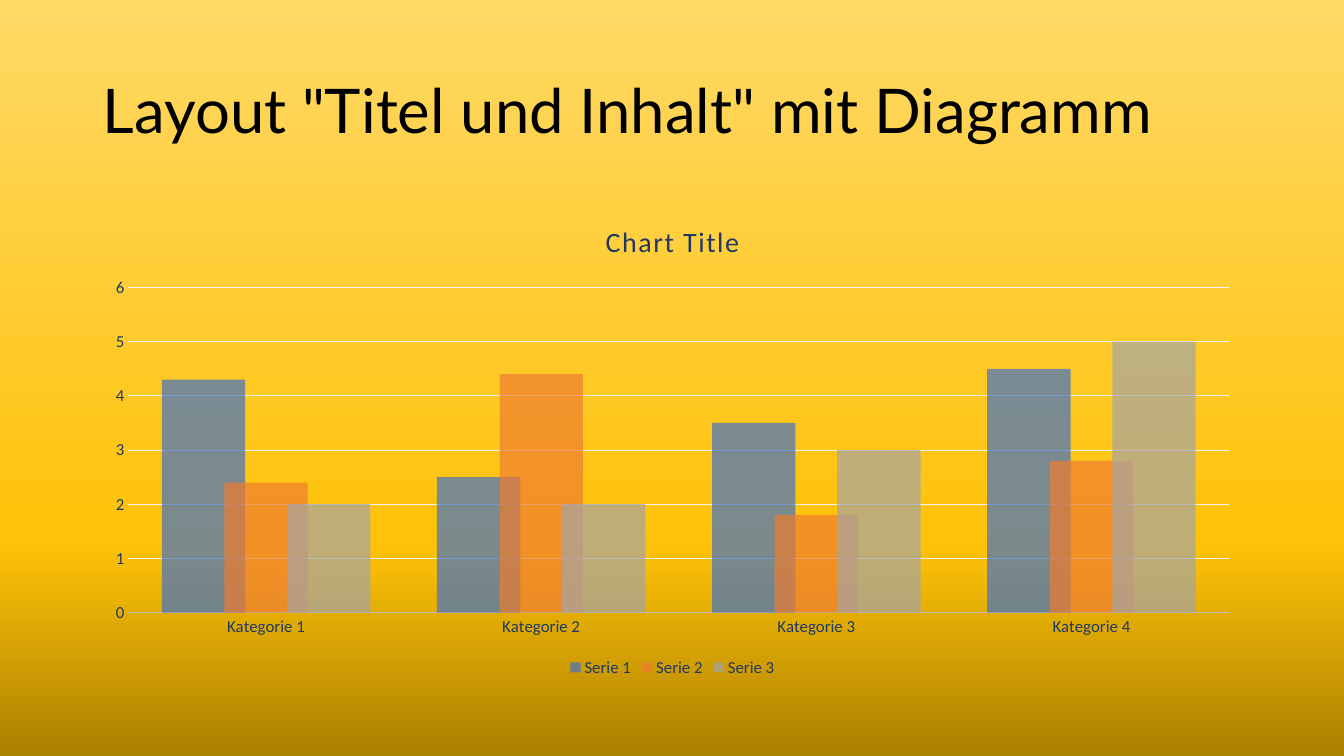
from copy import deepcopy

from lxml.etree import SubElement as Sub
from pptx import Presentation
from pptx.chart.data import CategoryChartData as Data
from pptx.dml.color import RGBColor as Rgb
from pptx.enum.chart import XL_CHART_TYPE as Kind
from pptx.enum.chart import XL_LEGEND_POSITION as Spot
from pptx.enum.chart import XL_TICK_MARK as Tick
from pptx.enum.text import MSO_ANCHOR as Anchor
from pptx.oxml.ns import qn
from pptx.util import Inches, Pt


class Deck:
    hues = {
        "dark": "AB8100", "gold": "FFC208", "pale": "FFD966",
        "black": "000000", "navy": "203864", "axis": "BFBFBF", "grid": "F2F2F2",
        "blue": "4472C4", "orange": "ED7D31", "gray": "A5A5A5",
    }
    head = "Lato"
    body = "Calibri"

    def __init__(self):
        self.prs = Presentation()
        self.prs.slide_width = Inches(13.33)
        self.prs.slide_height = Inches(7.5)
        self.slide = self.prs.slides.add_slide(self.prs.slide_layouts[6])

    def hue(self, name):
        return Rgb.from_string(self.hues[name])

    def font(self, font, face, size, hue):
        font.name = face
        font.size = Pt(size)
        font.bold = False
        font.color.rgb = self.hue(hue)

    def line(self, line, hue, width):
        line.color.rgb = self.hue(hue)
        line.width = Pt(width)

    def back(self, stops):
        fill = self.slide.background.fill
        fill.gradient()
        fill.gradient_angle = 90
        marks = self.slide.element.find(".//" + qn("a:gsLst"))
        while len(marks) < len(stops):
            marks.append(deepcopy(marks[0]))
        for stop, (place, hue) in zip(fill.gradient_stops, stops):
            stop.position = place
            stop.color.rgb = self.hue(hue)

    def title(self, text, left, top, width, height):
        box = self.slide.shapes.add_textbox(
            Inches(left), Inches(top), Inches(width), Inches(height))
        frame = box.text_frame
        frame.word_wrap = True
        frame.vertical_anchor = Anchor.MIDDLE
        frame.text = text
        para = frame.paragraphs[0]
        para.line_spacing = 0.9
        self.font(para.runs[0].font, self.head, 44, "black")

    def chart(self, title, cats, rows, left, top, width, height):
        data = Data()
        data.categories = cats
        for name, vals, _ in rows:
            data.add_series(name, vals)
        chart = self.slide.shapes.add_chart(
            Kind.COLUMN_CLUSTERED, Inches(left), Inches(top),
            Inches(width), Inches(height), data).chart
        self.font(chart.font, self.body, 10, "black")

        frame = chart.chart_title.text_frame
        frame.text = title
        font = frame.paragraphs[0].runs[0].font
        self.font(font, self.body, 20, "navy")
        font._element.set("spc", "100")
        chart.chart_title.include_in_layout = False

        chart.has_legend = True
        chart.legend.position = Spot.BOTTOM
        chart.legend.include_in_layout = False
        self.font(chart.legend.font, self.body, 12, "navy")
        self.axes(chart)
        self.bars(chart.plots[0], rows)

    def axes(self, chart):
        cat, val = chart.category_axis, chart.value_axis
        for axis in (cat, val):
            axis.major_tick_mark = axis.minor_tick_mark = Tick.NONE
            self.font(axis.tick_labels.font, self.body, 12, "navy")
        self.line(cat.format.line, "axis", 1.25)
        val.format.line.fill.background()
        val.minimum_scale, val.maximum_scale, val.major_unit = 0, 6, 1
        val.has_major_gridlines = True
        self.line(val.major_gridlines.format.line, "grid", 0.75)

    def bars(self, plot, rows):
        plot.gap_width = 80
        plot.overlap = 25
        plot.vary_by_categories = False
        for bar, (_, _, hue) in zip(plot.series, rows):
            fill = bar.format.fill
            fill.solid()
            fill.fore_color.rgb = self.hue(hue)
            color = bar._element.find(".//" + qn("a:srgbClr"))
            Sub(color, qn("a:alpha"), val="70000")
            bar.format.line.fill.background()


def main():
    deck = Deck()
    deck.back([(0, "dark"), (0.28, "gold"), (1, "pale")])
    deck.title('Layout "Titel und Inhalt" mit Diagramm', 0.92, 0.4, 11.5, 1.45)
    rows = [
        ("Serie 1", (4.3, 2.5, 3.5, 4.5), "blue"),
        ("Serie 2", (2.4, 4.4, 1.8, 2.8), "orange"),
        ("Serie 3", (2, 2, 3, 5), "gray"),
    ]
    cats = [f"Kategorie {num}" for num in range(1, 5)]
    deck.chart("Chart Title", cats, rows, 0.92, 2, 11.5, 4.76)
    deck.prs.save("out.pptx")


if __name__ == "__main__":
    main()
